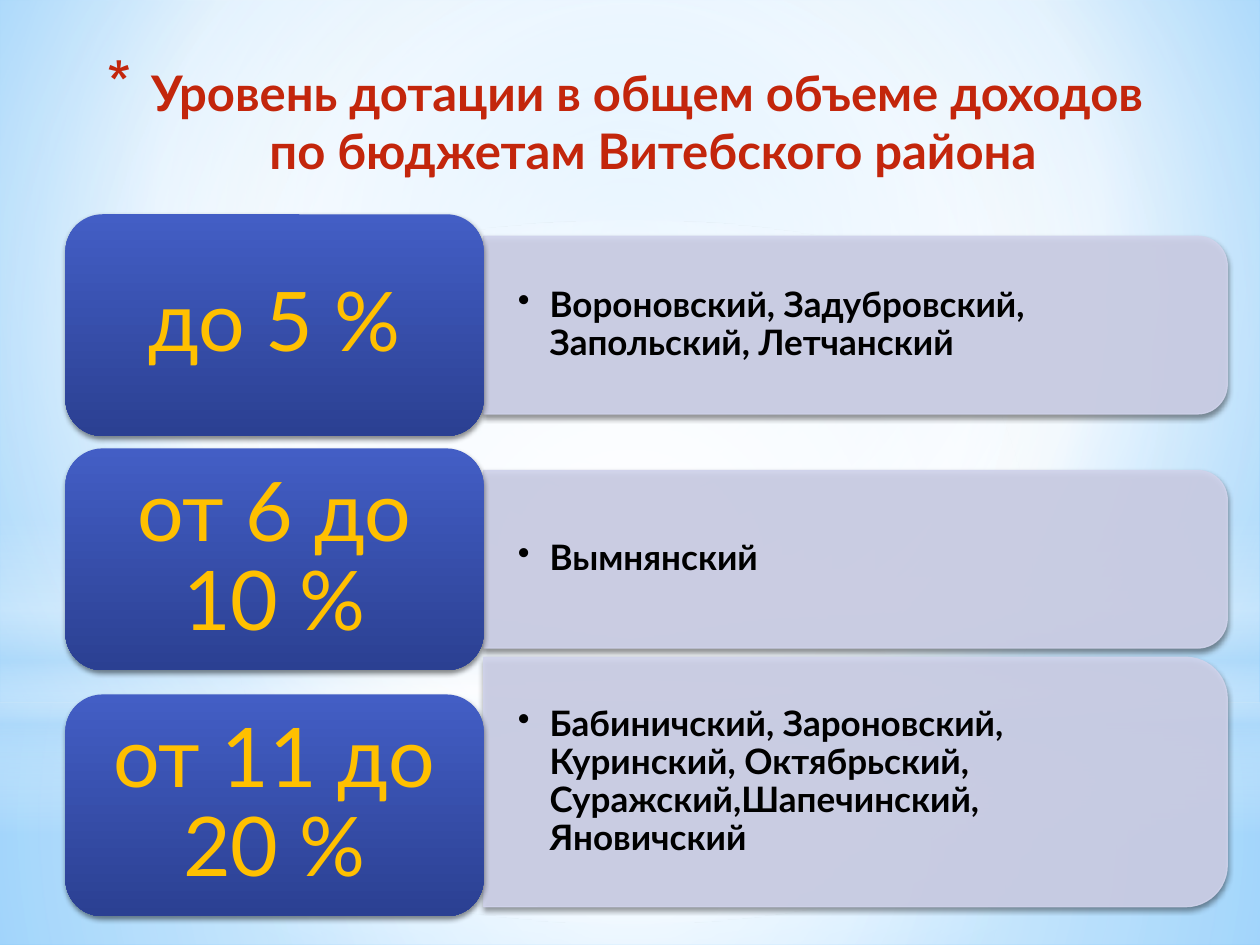
from dataclasses import dataclass
from typing import NamedTuple, Optional

from pptx import Presentation
from pptx.dml.color import RGBColor
from pptx.enum.shapes import MSO_SHAPE
from pptx.enum.text import MSO_ANCHOR, MSO_AUTO_SIZE, PP_ALIGN
from pptx.oxml import parse_xml
from pptx.oxml.ns import nsdecls, qn
from pptx.util import Cm, Pt

RECTANGLE, ELLIPSE = MSO_SHAPE.RECTANGLE, MSO_SHAPE.OVAL
ROUNDED, ROUND_TOP = MSO_SHAPE.ROUNDED_RECTANGLE, MSO_SHAPE.ROUND_2_SAME_RECTANGLE
TOP, MIDDLE = MSO_ANCHOR.TOP, MSO_ANCHOR.MIDDLE
CENTER, LEFT = PP_ALIGN.CENTER, PP_ALIGN.LEFT
NO_AUTOFIT = MSO_AUTO_SIZE.NONE


@dataclass(frozen=True)
class Theme:
    font: str = "Lato"
    title: str = "C3260C"
    label: str = "FFC000"
    body: str = "000000"
    panel: str = "D0D3EB"
    white: str = "FFFFFF"
    haze: str = "B4DCFA"
    title_size: int = 28
    label_size: int = 47
    body_size: int = 20


THEME = Theme()


class Stop(NamedTuple):
    place: int
    color: str
    opacity: int = 100


@dataclass(frozen=True)
class Gradient:
    stops: tuple[Stop, ...]
    focus: Optional[tuple[int, int, int, int]] = None  # None runs top to bottom


class Layer(NamedTuple):
    kind: int
    top: float
    height: float
    gradient: Gradient


class Row(NamedTuple):
    label: str
    councils: str
    top: float
    panel_height: float = 3.58
    panel_lift: float = 0


CENTRED = (50, 50, 50, 50)
WHITE, HAZE = THEME.white, THEME.haze
SKY = Gradient((Stop(0, "9ED5FF"), Stop(60, WHITE), Stop(100, "5BB9FF")), (20, 10, 20, 60))
LABEL_FILL = Gradient((Stop(0, "435EC5"), Stop(100, "2B4092")))
LAYERS = (
    Layer(RECTANGLE, 14.17, 4.88, Gradient(
        (Stop(0, WHITE, 91), Stop(37, WHITE, 76), Stop(100, HAZE, 79)), CENTRED)),
    Layer(RECTANGLE, 0, 14.17, Gradient(
        (Stop(0, WHITE, 89), Stop(48, WHITE, 62), Stop(100, HAZE, 79)), CENTRED)),
    Layer(RECTANGLE, 10.46, 6.35, Gradient(
        (Stop(0, WHITE, 0), Stop(29, WHITE, 30), Stop(45, HAZE, 40),
         Stop(55, WHITE, 26), Stop(65, HAZE, 60), Stop(100, WHITE, 0)))),
    Layer(ELLIPSE, 4.45, 14.17, Gradient((Stop(0, WHITE), Stop(56, WHITE, 0)), CENTRED)),
)

TITLE_LINES = ("Уровень дотации в общем объеме доходов ", "по бюджетам Витебского района")
ROWS = (
    Row("до 5 %", "Вороновский, Задубровский, Запольский, Летчанский", 4.32),
    Row("от 6 до 10 %", "Вымнянский", 9.04),
    Row("от 11 до 20 %", "Бабиничский, Зароновский, Куринский, Октябрьский, "
        "Суражский,Шапечинский, Яновичский", 14, 5.03, 0.47),
)
PAGE_WIDTH, PAGE_HEIGHT = 25.4, 19.05
LABEL_LEFT, LABEL_WIDTH, LABEL_HEIGHT = 1.32, 8.43, 4.47
PANEL_LEFT, PANEL_WIDTH = LABEL_LEFT + LABEL_WIDTH, 14.99
CORNER_TRIM = 0.29 / 6  # room a rounded corner takes from the text area


def paint_gradient(fill, element, gradient: Gradient) -> None:
    fill.gradient()
    stops = "".join(
        f'<a:gs pos="{stop.place * 1000}"><a:srgbClr val="{stop.color}">'
        f'<a:alpha val="{stop.opacity * 1000}"/></a:srgbClr></a:gs>'
        for stop in gradient.stops)
    course = '<a:lin ang="5400000" scaled="0"/>'
    if gradient.focus:
        sides = " ".join(f'{side}="{share * 1000}"' for side, share in zip("ltrb", gradient.focus))
        course = f'<a:path path="circle"><a:fillToRect {sides}/></a:path>'
    plain = next(element.iter(qn("a:gradFill")))
    plain.getparent().replace(plain, parse_xml(
        f'<a:gradFill {nsdecls("a")} rotWithShape="1"><a:gsLst>{stops}</a:gsLst>{course}</a:gradFill>'))


def add_box(page, kind: int, left: float, top: float, width: float, height: float):
    box = page.shapes.add_shape(kind, Cm(left), Cm(top), Cm(width), Cm(height))
    box.shadow.inherit = False
    box.line.fill.background()
    return box


def drop_shadow(box) -> None:
    box.element.spPr.find(qn("a:effectLst")).append(parse_xml(
        f'<a:outerShdw {nsdecls("a")} blurRad="{Pt(3.1)}" dist="{Pt(1.8)}" dir="5400000" '
        'rotWithShape="0"><a:srgbClr val="000000"><a:alpha val="45000"/></a:srgbClr></a:outerShdw>'))


def set_frame(frame, anchor: int, side: float, edge: float) -> None:
    frame.word_wrap = True
    frame.auto_size = NO_AUTOFIT
    frame.vertical_anchor = anchor
    frame.margin_left = frame.margin_right = Cm(side)
    frame.margin_top = frame.margin_bottom = Cm(edge)


def add_span(para, text: str, size: int, color: str, bold: bool) -> None:
    span = para.add_run()
    span.text = text
    span.font.name = THEME.font
    span.font.size = Pt(size)
    span.font.bold = bold
    span.font.color.rgb = RGBColor.from_string(color)


def set_bullet(para, mark: str, indent: float, color: str, percent: int) -> None:
    settings = para._p.get_or_add_pPr()
    settings.set("marL", str(Cm(indent)))
    settings.set("indent", str(-Cm(indent)))
    for part in (f'<a:buClr {nsdecls("a")}><a:srgbClr val="{color}"/></a:buClr>',
                 f'<a:buSzPct {nsdecls("a")} val="{percent * 1000}"/>',
                 f'<a:buChar {nsdecls("a")} char="{mark}"/>'):
        settings.append(parse_xml(part))


def draw_backdrop(page) -> None:
    paint_gradient(page.background.fill, page.element, SKY)
    for layer in LAYERS:
        box = add_box(page, layer.kind, 0, layer.top, PAGE_WIDTH, layer.height)
        paint_gradient(box.fill, box.element, layer.gradient)


def draw_title(page) -> None:
    title = page.shapes.title
    title.element.getparent().append(title.element)  # in front of the backdrop
    title.left, title.top, title.width, title.height = Cm(0.51), Cm(1.12), Cm(24.41), Cm(2.39)
    set_frame(title.text_frame, TOP, 0.25, 0.13)
    para = title.text_frame.paragraphs[0]
    para.alignment = CENTER
    set_bullet(para, "*", 0.89, THEME.title, 128)
    for number, line in enumerate(TITLE_LINES):
        if number:
            para.add_line_break()
        add_span(para, line, THEME.title_size, THEME.title, True)


def draw_panel(page, row: Row) -> None:
    middle = row.top + LABEL_HEIGHT / 2 - row.panel_lift
    height = row.panel_height
    # Upright shape turned a quarter, so its round corners face right
    panel = add_box(page, ROUND_TOP, PANEL_LEFT + (PANEL_WIDTH - height) / 2,
                    middle - PANEL_WIDTH / 2, height, PANEL_WIDTH)
    panel.rotation = 90
    panel.fill.solid()
    panel.fill.fore_color.rgb = RGBColor.from_string(THEME.panel)
    panel.line.color.rgb = RGBColor.from_string(THEME.panel)
    panel.line.width = Pt(0.75)
    for color in panel.element.spPr.iter(qn("a:srgbClr")):
        color.append(parse_xml(f'<a:alpha {nsdecls("a")} val="90000"/>'))
    drop_shadow(panel)

    trim = height * CORNER_TRIM
    text = page.shapes.add_textbox(Cm(PANEL_LEFT), Cm(middle - height / 2 + trim),
                                   Cm(PANEL_WIDTH - trim), Cm(height - 2 * trim))
    set_frame(text.text_frame, MIDDLE, 0.69, 0.36)
    para = text.text_frame.paragraphs[0]
    para.level = 1
    para.alignment = LEFT
    para.line_spacing = 0.9
    set_bullet(para, "•", 0.64, THEME.body, 100)
    add_span(para, row.councils, THEME.body_size, THEME.body, True)


def draw_label(page, row: Row) -> None:
    label = add_box(page, ROUNDED, LABEL_LEFT, row.top, LABEL_WIDTH, LABEL_HEIGHT)
    paint_gradient(label.fill, label.element, LABEL_FILL)
    drop_shadow(label)
    set_frame(label.text_frame, MIDDLE, 0.51, 0.25)
    para = label.text_frame.paragraphs[0]
    para.alignment = CENTER
    para.line_spacing = 0.9
    add_span(para, row.label, THEME.label_size, THEME.label, False)


def main() -> None:
    deck = Presentation()
    deck.slide_width, deck.slide_height = Cm(PAGE_WIDTH), Cm(PAGE_HEIGHT)
    page = deck.slides.add_slide(deck.slide_layouts[5])
    draw_backdrop(page)
    draw_title(page)
    for row in ROWS:
        draw_panel(page, row)
        draw_label(page, row)
    deck.save("out.pptx")


if __name__ == "__main__":
    main()
